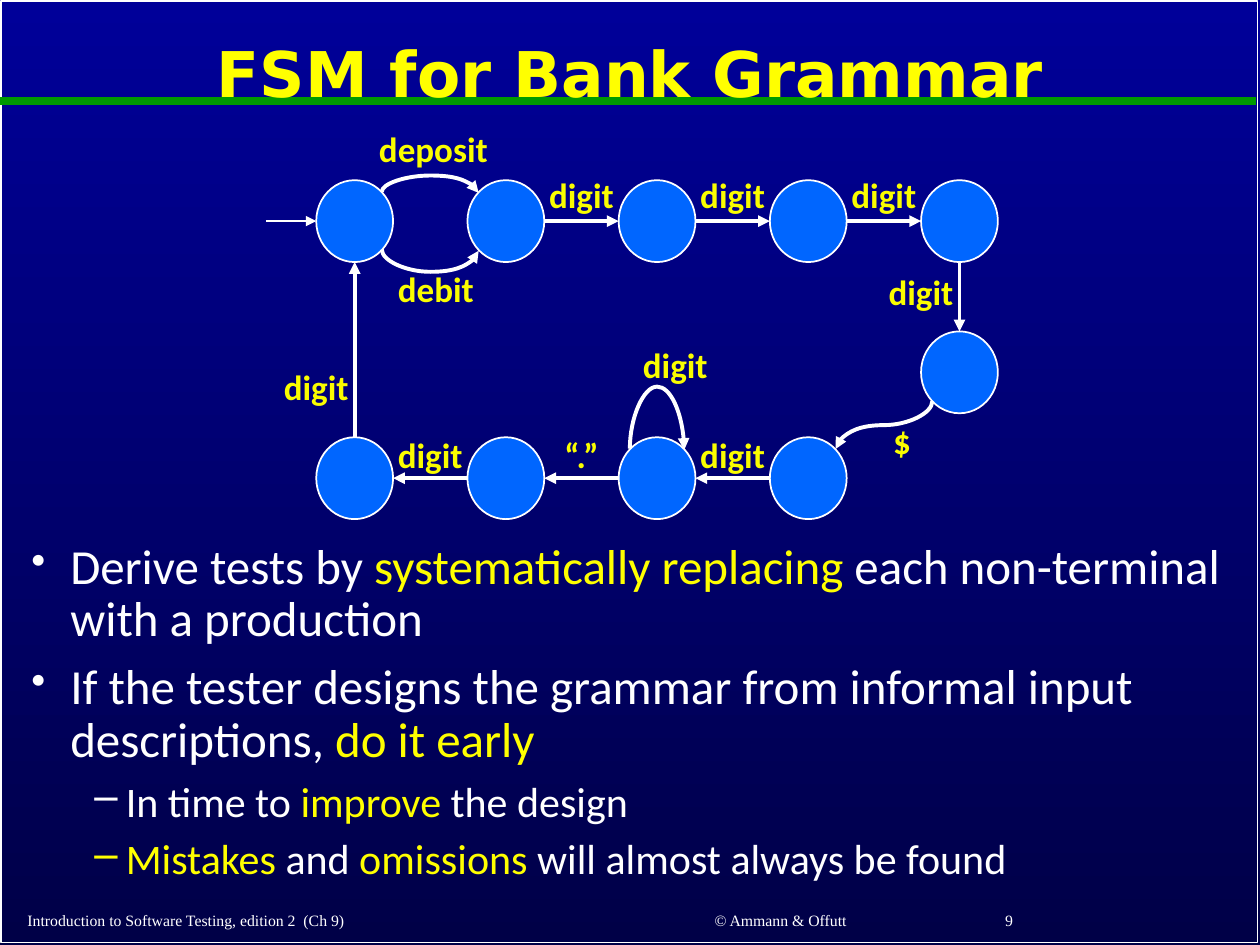
from math import cos, radians, sin

from lxml.etree import SubElement
from pptx import Presentation
from pptx.dml.color import RGBColor
from pptx.enum.shapes import MSO_CONNECTOR, MSO_SHAPE
from pptx.enum.text import MSO_ANCHOR, PP_ALIGN
from pptx.oxml.ns import qn
from pptx.util import Inches, Pt

WHITE, YELLOW, LABEL_YELLOW = "FFFFFF", "FFFF00", "FAFD00"
GREEN, STATE_BLUE = "009900", "0066FF"
STATE_W, STATE_H, STATE_PITCH = 0.61, 0.65, 1.2
ROW_TOPS = (0.47, 1.67, 2.51)


def color(hex_value):
    return RGBColor.from_string(hex_value)


def add_text(slide, box, paragraphs, size=20, font="Calibri", fill=WHITE, bold=False,
             align=PP_ALIGN.LEFT, anchor=MSO_ANCHOR.TOP, wrap=True, line_spacing=None):
    """Each paragraph is a list of (text, colour) runs, or a plain string."""
    frame = slide.shapes.add_textbox(*map(Inches, box)).text_frame
    frame.word_wrap = wrap
    frame.vertical_anchor = anchor
    for index, runs in enumerate(paragraphs):
        paragraph = frame.add_paragraph() if index else frame.paragraphs[0]
        paragraph.alignment = align
        if line_spacing:
            paragraph.line_spacing = line_spacing
        for text, run_fill in [(runs, fill)] if isinstance(runs, str) else runs:
            run = paragraph.add_run()
            run.text = text
            run.font.name, run.font.size, run.font.bold = font, Pt(size), bold
            run.font.color.rgb = color(run_fill)
    return frame


def add_line(slide, start, end, stroke=WHITE, width=2.25, arrow=True,
             kind=MSO_CONNECTOR.STRAIGHT):
    line = slide.shapes.add_connector(kind, *map(Inches, (*start, *end)))
    line.line.color.rgb = color(stroke)
    line.line.width = Pt(width)
    if arrow:
        SubElement(line.line._get_or_add_ln(), qn("a:tailEnd"), type="triangle")
    SubElement(line._element.spPr, qn("a:effectLst"))
    return line


def add_curve(slide, start, end, bend):
    """Arrow that leaves and arrives vertically, turning `bend` inches below its start."""
    (x1, y1), (x2, y2) = start, end
    width, height = max(y2 - y1, 0.01), abs(x2 - x1)
    curve = add_line(slide, start, end, kind=MSO_CONNECTOR.CURVE)
    curve.left = Inches((x1 + x2 - width) / 2)
    curve.top = Inches((y1 + y2 - height) / 2)
    curve.width, curve.height = Inches(width), Inches(height)
    xfrm = curve._element.spPr.find(qn("a:xfrm"))
    xfrm.attrib.pop("flipH", None)
    xfrm.set("rot", str(90 * 60000))
    xfrm.set("flipV", "1" if x2 > x1 else "0")
    geometry = curve._element.spPr.find(qn("a:prstGeom"))
    geometry.set("prst", "curvedConnector3")
    adjustments = geometry.find(qn("a:avLst"))
    if adjustments is None:
        adjustments = SubElement(geometry, qn("a:avLst"))
    SubElement(adjustments, qn("a:gd"), name="adj1", fmla=f"val {round(bend / width * 100000)}")


def add_state(slide, center):
    x, y = center
    state = slide.shapes.add_shape(
        MSO_SHAPE.OVAL, Inches(x - STATE_W / 2), Inches(y - STATE_H / 2),
        Inches(STATE_W), Inches(STATE_H))
    state.shadow.inherit = False
    state.fill.solid()
    state.fill.fore_color.rgb = color(STATE_BLUE)
    state.line.color.rgb = color(WHITE)
    state.line.width = Pt(1)


def rim(center, degrees):
    """Point on a state's outline, clockwise from its right side."""
    angle = radians(degrees)
    return center[0] + STATE_W / 2 * cos(angle), center[1] + STATE_H / 2 * sin(angle)


def add_label(slide, text, center_x, top):
    add_text(slide, (center_x - 0.6, top, 1.2, 0.43), [text], fill=LABEL_YELLOW,
             bold=True, align=PP_ALIGN.CENTER, wrap=False)


def add_state_machine(slide, left, top):
    def state_row(row, columns):
        return [(left + 0.4 + STATE_PITCH * column + STATE_W / 2,
                 top + ROW_TOPS[row] + STATE_H / 2) for column in columns]

    upper, (middle,), lower = state_row(0, range(5)), state_row(1, [4]), state_row(2, range(4))
    for center in (*upper, middle, *lower):
        add_state(slide, center)

    first, second = upper[:2]
    entry = rim(first, 180)
    add_line(slide, (left, entry[1]), entry, width=1.5)
    add_curve(slide, rim(first, -45), rim(second, -135), -0.13)
    add_curve(slide, rim(first, 45), rim(second, 135), 0.18)
    add_curve(slide, rim(lower[2], -135), rim(lower[2], -45), -0.5)
    add_curve(slide, rim(middle, 135), rim(lower[3], -45), 0.19)
    add_line(slide, rim(upper[4], 90), rim(middle, -90))
    add_line(slide, rim(lower[0], -90), rim(first, 90))

    for source, target in zip(upper[1:], upper[2:]):
        add_line(slide, rim(source, 0), rim(target, 180))
        add_label(slide, "digit", (source[0] + target[0]) / 2, top + 0.37)
    for target, source, text in zip(lower, lower[1:], ("digit", "“.”", "digit")):
        add_line(slide, rim(source, 180), rim(target, 0))
        add_label(slide, text, (source[0] + target[0]) / 2, top + 2.43)
    for text, x, y in (("deposit", 1.33, 0), ("debit", 1.35, 1.11), ("digit", 5.2, 1.14),
                       ("digit", 0.4, 1.89), ("digit", 3.25, 1.72), ("$", 5.05, 2.32)):
        add_label(slide, text, left + x, top + y)


def add_bullets(slide, box):
    points = [
        (0, [("Derive tests by ", WHITE), ("systematically replacing", YELLOW),
             (" each non-terminal with a production", WHITE)]),
        (0, [("If the tester designs the grammar from informal input descriptions, ", WHITE),
             ("do it early", YELLOW)]),
        (1, [("In time to ", WHITE), ("improve", YELLOW), (" the design", WHITE)]),
        (1, [("Mistakes", YELLOW), (" and ", WHITE), ("omissions", YELLOW),
             (" will almost always be found", WHITE)]),
    ]
    # size, text indent, hanging indent, bullet size, bullet
    levels = [(28, 0.31, 0.31, 85, "•"), (24, 0.75, 0.25, 100, "–")]
    frame = add_text(slide, box, [runs for _, runs in points], line_spacing=0.9)
    for index, (paragraph, (level, _)) in enumerate(zip(frame.paragraphs, points)):
        size, indent, hanging, bullet_size, bullet = levels[level]
        paragraph.level = level
        paragraph.space_before = Pt(0.3 * size if index else 0)
        for run in paragraph.runs:
            run.font.size = Pt(size)
        properties = paragraph._p.get_or_add_pPr()
        properties.set("marL", str(Inches(indent)))
        properties.set("indent", str(-Inches(hanging)))
        SubElement(properties, qn("a:buSzPct"), val=str(bullet_size * 1000))
        SubElement(properties, qn("a:buChar"), char=bullet)


def add_backdrop(slide, box):
    fill = slide.background.fill
    fill.gradient()
    fill.gradient_angle = 270
    for stop, position, shade in zip(fill.gradient_stops, (0, 1), ("000099", "000047")):
        stop.position = position
        stop.color.rgb = color(shade)
    left, top, width, _ = box
    border = slide.shapes.add_shape(MSO_SHAPE.RECTANGLE, *map(Inches, box))
    border.shadow.inherit = False
    border.fill.background()
    border.line.color.rgb = color(WHITE)
    border.line.width = Pt(1)
    rule_y = top + 0.79
    add_line(slide, (left - 0.01, rule_y), (left + width - 0.01, rule_y),
             stroke=GREEN, width=4.5, arrow=False)


def add_footer(slide, left, top):
    for text, x, width, align in (
            ("Introduction to Software Testing, edition 2  (Ch 9)", 0, 4.27, PP_ALIGN.LEFT),
            ("© Ammann & Offutt", 4.49, 3.17, PP_ALIGN.CENTER),
            ("9", 7.76, 1.97, PP_ALIGN.LEFT)):
        add_text(slide, (left + x, top, width, 0.3), [text], size=9,
                 font="Times New Roman", align=align, anchor=MSO_ANCHOR.BOTTOM)


def main():
    presentation = Presentation()
    presentation.slide_width, presentation.slide_height = Inches(10), Inches(7.5)
    slide = presentation.slides.add_slide(presentation.slide_layouts[6])
    add_backdrop(slide, (0.01, 0.01, 9.97, 7.47))
    add_text(slide, (0.1, 0.11, 9.8, 1), ["FSM for Bank Grammar"], size=36,
             font="DejaVu Sans", fill=YELLOW, bold=True, align=PP_ALIGN.CENTER,
             anchor=MSO_ANCHOR.MIDDLE, line_spacing=0.9)
    add_bullets(slide, (0.15, 4.25, 9.7, 2.79))
    add_state_machine(slide, 2.11, 0.96)
    add_footer(slide, 0.12, 7.13)
    presentation.save("out.pptx")


if __name__ == "__main__":
    main()
